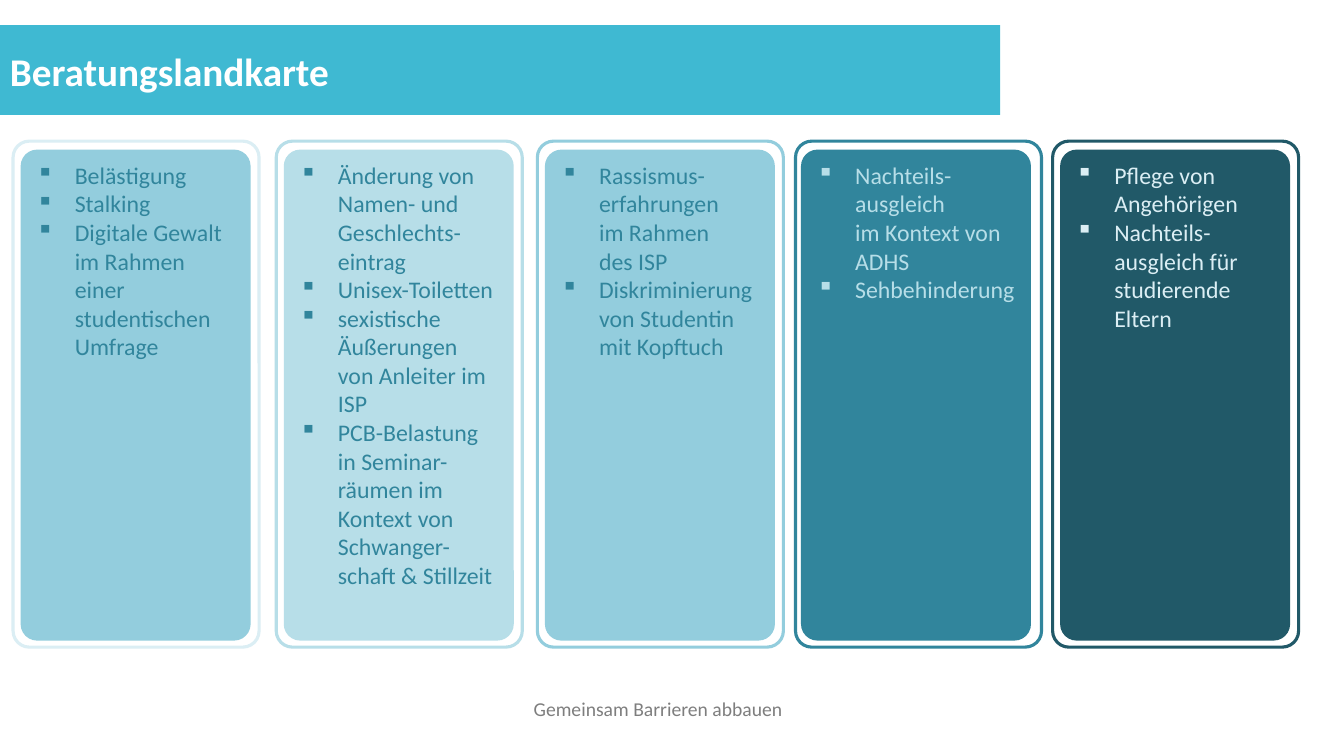
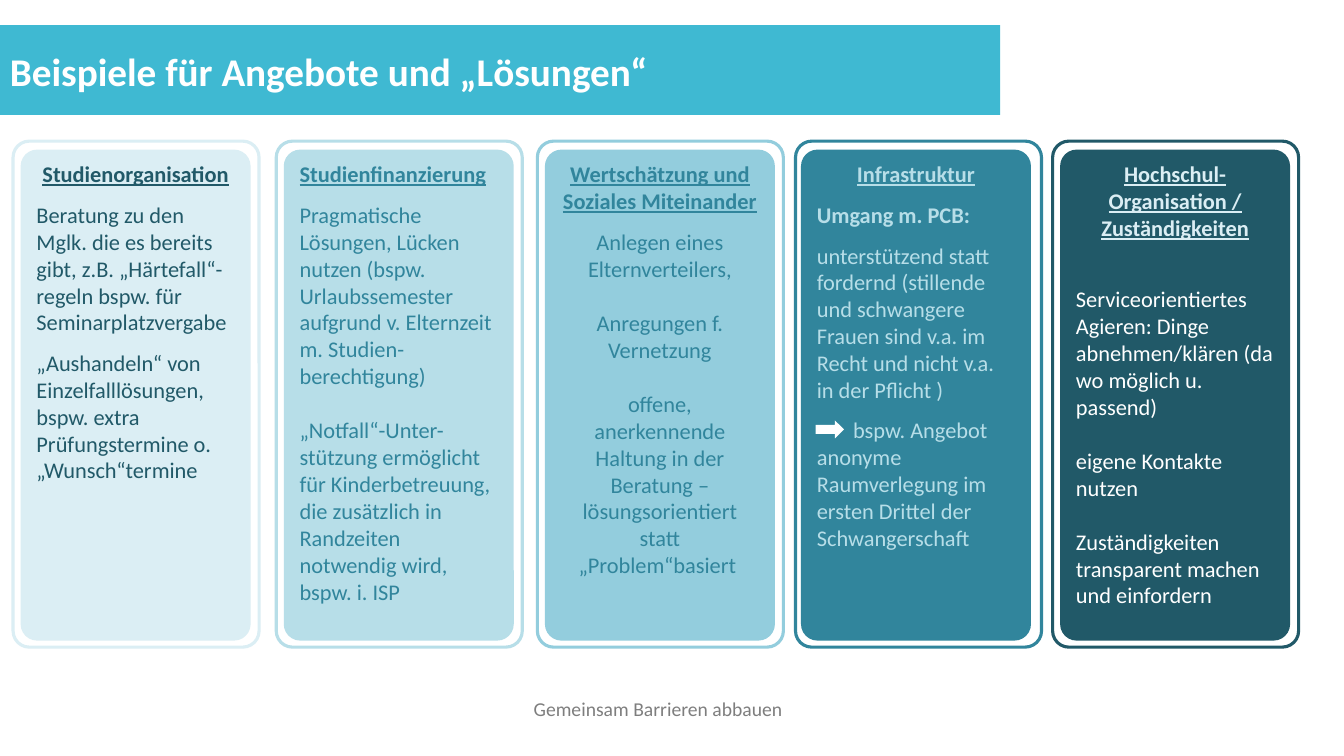
from dataclasses import dataclass

from lxml import etree
from pptx import Presentation
from pptx import util as u
from pptx.dml import color as dml
from pptx.enum import shapes, text
from pptx.oxml import ns

PX = 9144


@dataclass(frozen=True)
class Theme:
    """Colours, font and type sizes of the deck."""

    font: str = "Calibri"
    band: str = "3FB9D2"
    white: str = "FFFFFF"
    grey: str = "7E7E7E"
    mist: str = "DBEEF4"
    pale: str = "B7DEE8"
    sky: str = "93CDDD"
    teal: str = "31859C"
    deep: str = "215968"
    title: int = 28
    bullet: int = 17
    body: int = 16
    footer: int = 14
    outline: float = 2.25
    small_gap: float = 9.8
    line_gap: float = 19.5
    wide_gap: float = 31.5


THEME = Theme()
FRAME_LEFTS = (13, 274, 533, 789, 1044)
PANEL_LEFTS = (22, 283, 542, 796, 1053)
FRAME_COLORS = (THEME.mist, THEME.pale, THEME.sky, THEME.teal, THEME.deep)
CENTER = text.PP_ALIGN.CENTER
HEADING = {"bold": True, "underline": True}
CENTERED_HEADING = {**HEADING, "align": CENTER}
AFTER_HEADING = {"before": THEME.small_gap}
NEXT_POINT = {"before": THEME.line_gap}

TOPICS = (
    (THEME.sky, THEME.teal, (
        "Belästigung",
        "Stalking",
        "Digitale Gewalt im Rahmen einer studentischen Umfrage",
    )),
    (THEME.pale, THEME.teal, (
        "Änderung von Namen- und Geschlechts-eintrag",
        "Unisex-Toiletten",
        "sexistische Äußerungen von Anleiter im ISP",
        "PCB-Belastung in Seminar-räumen im Kontext von Schwanger-schaft & Stillzeit",
    )),
    (THEME.sky, THEME.teal, (
        "Rassismus-erfahrungen\nim Rahmen\ndes ISP",
        "Diskriminierung von Studentin mit Kopftuch",
    )),
    (THEME.teal, THEME.pale, (
        "Nachteils-ausgleich\nim Kontext von ADHS",
        "Sehbehinderung",
    )),
    (THEME.deep, THEME.mist, (
        "Pflege von Angehörigen",
        "Nachteils-ausgleich für studierende Eltern",
    )),
)

SOLUTIONS = (
    (THEME.mist, THEME.deep, (
        ("Studienorganisation", CENTERED_HEADING),
        ("Beratung zu den Mglk. die es bereits gibt, z.B. „Härtefall“- regeln "
         "bspw. für Seminarplatzvergabe", AFTER_HEADING),
        ("„Aushandeln“ von Einzelfalllösungen, bspw. extra Prüfungstermine o. "
         "„Wunsch“termine", AFTER_HEADING),
    )),
    (THEME.pale, THEME.teal, (
        ("Studienfinanzierung", HEADING),
        ("Pragmatische Lösungen, Lücken nutzen (bspw. Urlaubssemester aufgrund "
         "v. Elternzeit m. Studien-berechtigung)", AFTER_HEADING),
        ("„Notfall“-Unter-stützung ermöglicht für Kinderbetreuung, die zusätzlich "
         "in Randzeiten notwendig wird, bspw. i. ISP", NEXT_POINT),
    )),
    (THEME.sky, THEME.teal, (
        ("Wertschätzung und", CENTERED_HEADING),
        ("Soziales Miteinander", CENTERED_HEADING),
        ("Anlegen eines Elternverteilers,", {**AFTER_HEADING, "align": CENTER}),
        ("Anregungen f. Vernetzung", {**NEXT_POINT, "align": CENTER}),
        ("offene, anerkennende Haltung in der Beratung – lösungsorientiert statt "
         "„Problem“basiert ", {**NEXT_POINT, "align": CENTER}),
    )),
    (THEME.teal, THEME.pale, (
        ("Infrastruktur", CENTERED_HEADING),
        ("Umgang m. PCB:", {**AFTER_HEADING, "bold": True}),
        ("unterstützend statt fordernd (stillende und schwangere Frauen sind v.a. "
         "im Recht und nicht v.a. in der Pflicht )", AFTER_HEADING),
        ("bspw. Angebot anonyme Raumverlegung im ersten Drittel der Schwangerschaft",
         {**AFTER_HEADING, "indent": 36}),
    )),
    (THEME.deep, THEME.mist, (
        ("Hochschul-", CENTERED_HEADING),
        ("Organisation / Zuständigkeiten", CENTERED_HEADING),
        ("Serviceorientiertes Agieren: Dinge abnehmen/klären (da wo möglich u. passend)",
         {"before": THEME.wide_gap, "color": THEME.white}),
        ("eigene Kontakte nutzen", {**NEXT_POINT, "color": THEME.white}),
        ("Zuständigkeiten transparent machen und einfordern",
         {**NEXT_POINT, "color": THEME.white}),
    )),
)


def rgb(value):
    """Turn a hex string into a colour."""
    return dml.RGBColor.from_string(value)


def px(*lengths):
    """Turn pixel lengths into EMU."""
    return [u.Emu(length * PX) for length in lengths]


def write(frame, words, *, size, color, bold=False, underline=False,
          align=text.PP_ALIGN.LEFT, before=0, spacing=None, margin=0, indent=0,
          bullet=None):
    """Add one formatted paragraph to a text frame."""
    para = frame.add_paragraph() if frame.text else frame.paragraphs[0]
    para.text = words
    para.alignment = align
    if before:
        para.space_before = u.Pt(before)
    if spacing:
        para.line_spacing = u.Pt(spacing)
    props = para._p.get_or_add_pPr()
    props.set("marL", str(margin * PX))
    props.set("indent", str(indent * PX))
    if bullet:
        etree.SubElement(props, ns.qn("a:buChar"), char=bullet)
    for line_break in para._p.findall(ns.qn("a:br")):
        etree.SubElement(line_break, ns.qn("a:rPr"), sz=str(size * 100))
    for span in para.runs:
        font = span.font
        font.name, font.size = THEME.font, u.Pt(size)
        font.bold, font.underline = bold, underline
        font.color.rgb = rgb(color)


def add_box(slide, kind, bounds, fill, line=None):
    """Draw a flat preset shape."""
    box = slide.shapes.add_shape(kind, *px(*bounds))
    box.shadow.inherit = False
    box.fill.solid()
    box.fill.fore_color.rgb = rgb(fill)
    if line:
        box.line.color.rgb = rgb(line)
        box.line.width = u.Pt(THEME.outline)
    else:
        box.line.fill.background()
    return box


def add_rounded(slide, bounds, fill, line):
    """Draw a box with slightly rounded corners and return its text frame."""
    box = add_box(slide, shapes.MSO_SHAPE.ROUNDED_RECTANGLE, bounds, fill, line)
    box.adjustments[0] = 0.066
    frame = box.text_frame
    frame.word_wrap = True
    frame.vertical_anchor = text.MSO_ANCHOR.TOP
    return frame


def add_label(slide, bounds, words, inset=True, **style):
    """Place a text box holding one paragraph."""
    frame = slide.shapes.add_textbox(*px(*bounds)).text_frame
    frame.word_wrap = True
    if not inset:
        frame.margin_left = frame.margin_right = 0
        frame.margin_top = frame.margin_bottom = 0
    write(frame, words, **style)


def add_page(deck, title, title_width):
    """Add a slide with title band, column frames and footer."""
    slide = deck.slides.add_slide(deck.slide_layouts[6])
    add_box(slide, shapes.MSO_SHAPE.RECTANGLE, (0, 25, 992, 89), THEME.band)
    add_label(slide, (0, 42, title_width, 57), title,
              size=THEME.title, color=THEME.white, bold=True)
    for left, color in zip(FRAME_LEFTS, FRAME_COLORS):
        add_rounded(slide, (left, 140, 244, 502), THEME.white, color)
    add_label(slide, (428, 702, 454, 15), "Gemeinsam Barrieren abbauen ", inset=False,
              size=THEME.footer, color=THEME.grey, align=CENTER, spacing=9.1)
    return slide


def add_panels(slide, columns):
    """Draw the filled panels, yielding each with its colour and entries."""
    for left, (fill, color, entries) in zip(PANEL_LEFTS, columns):
        yield add_rounded(slide, (left, 150, 225, 484), fill, fill), color, entries


def build_topics(deck):
    """Build the slide of bulleted counselling topics."""
    slide = add_page(deck, "Beratungslandkarte", 365)
    for frame, color, entries in add_panels(slide, TOPICS):
        for words in entries:
            write(frame, words, size=THEME.bullet, color=color,
                  margin=38, indent=-38, bullet="▪")


def build_solutions(deck):
    """Build the slide of offers and solutions."""
    slide = add_page(deck, "Beispiele für Angebote und „Lösungen“", 750)
    for frame, color, entries in add_panels(slide, SOLUTIONS):
        for words, style in entries:
            write(frame, words, **{"size": THEME.body, "color": color, **style})
    add_box(slide, shapes.MSO_SHAPE.RIGHT_ARROW, (809, 417, 28, 18), THEME.white)


def main():
    """Build and save the deck."""
    deck = Presentation()
    deck.slide_width, deck.slide_height = px(1333, 750)
    build_topics(deck)
    build_solutions(deck)
    deck.save("out.pptx")


if __name__ == "__main__":
    main()
